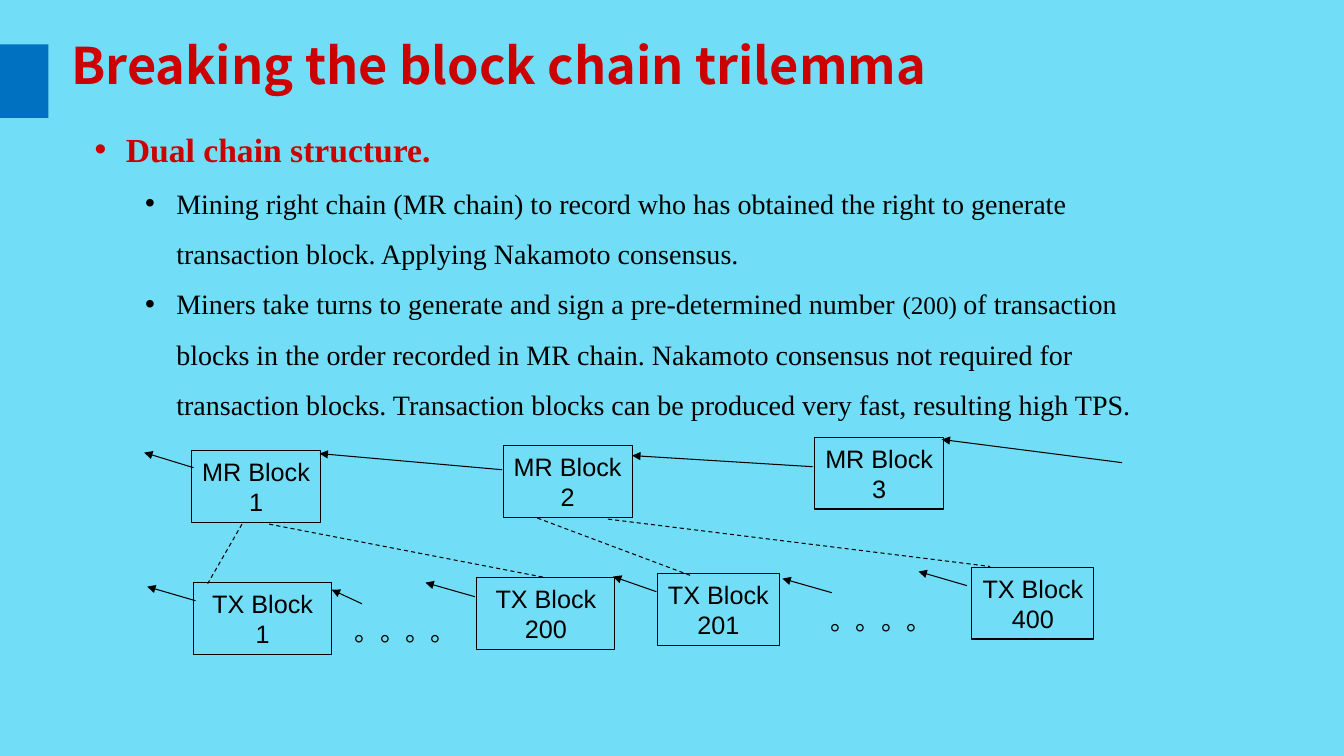
from typing import NamedTuple

from lxml.etree import SubElement as Sub
from pptx import Presentation
from pptx.dml.color import RGBColor
from pptx.enum.dml import MSO_LINE_DASH_STYLE as Dash
from pptx.enum.shapes import MSO_CONNECTOR as Link, MSO_SHAPE as Kind
from pptx.enum.text import MSO_ANCHOR as Anchor, PP_ALIGN as Align
from pptx.oxml.ns import qn
from pptx.util import Inches, Pt

SKY = RGBColor(0x72, 0xDD, 0xF6)
BLUE = RGBColor(0x00, 0x70, 0xC0)
RED = RGBColor(0xCC, 0x00, 0x00)
BLACK = RGBColor(0x00, 0x00, 0x00)
SERIF = "Times New Roman"
SANS = "Arial"


class Block(NamedTuple):
    chain: str
    num: int
    left: float
    top: float
    width: float


class Line(NamedTuple):
    x1: float
    y1: float
    x2: float
    y2: float


class Point(NamedTuple):
    level: int
    runs: list[tuple[str, int]]
    color: RGBColor
    bold: bool


BLOCKS = [
    Block("MR", 1, 1.9, 4.47, 1.28),
    Block("MR", 2, 4.99, 4.42, 1.28),
    Block("MR", 3, 8.08, 4.34, 1.28),
    Block("TX", 1, 1.92, 5.78, 1.37),
    Block("TX", 200, 4.73, 5.73, 1.37),
    Block("TX", 201, 6.52, 5.69, 1.21),
    Block("TX", 400, 9.64, 5.63, 1.21),
]
ARROWS = [
    Line(1.92, 4.64, 1.43, 4.49),
    Line(4.98, 4.66, 3.17, 4.5),
    Line(8.06, 4.63, 6.27, 4.52),
    Line(11.13, 4.59, 9.34, 4.36),
    Line(1.94, 5.96, 1.46, 5.82),
    Line(3.59, 5.99, 3.29, 5.85),
    Line(4.71, 5.92, 4.22, 5.78),
    Line(6.51, 5.87, 6.08, 5.72),
    Line(8.25, 5.88, 7.76, 5.74),
    Line(9.59, 5.81, 9.11, 5.67),
]
DASHES = [
    Line(2.4, 5.2, 2.06, 5.79),
    Line(2.67, 5.2, 5.41, 5.73),
    Line(5.33, 5.14, 6.85, 5.71),
    Line(6.03, 5.15, 9.82, 5.62),
]
DOTS = [(3.42, 6.07), (8.14, 5.96)]
POINTS = [
    Point(0, [("Dual chain structure.", 24)], RED, True),
    Point(1, [("Mining right chain (MR chain) to record who has obtained the right "
               "to generate transaction block. Applying Nakamoto consensus.", 20)],
          BLACK, False),
    Point(1, [("Miners take turns to generate and sign a pre-determined number ", 20),
              ("(200) ", 18),
              ("of transaction blocks in the order recorded in MR chain. Nakamoto "
               "consensus not required for transaction blocks. Transaction blocks "
               "can be produced very fast, resulting high TPS.", 20)],
          BLACK, False),
]


def style(para, face: str, size: int, color: RGBColor, bold: bool = False) -> None:
    font = para.font
    font.name, font.size, font.bold = face, Pt(size), bold
    font.color.rgb = color


def add_box(slide, left: float, top: float, width: float, height: float):
    area = map(Inches, (left, top, width, height))
    frame = slide.shapes.add_textbox(*area).text_frame
    frame.word_wrap = True
    return frame


def add_rect(slide, left: float, top: float, width: float, height: float):
    area = map(Inches, (left, top, width, height))
    rect = slide.shapes.add_shape(Kind.RECTANGLE, *area)
    rect.shadow.inherit = False
    return rect


def add_title(slide) -> None:
    mark = add_rect(slide, 0, 0.44, 0.48, 0.73)
    mark.fill.solid()
    mark.fill.fore_color.rgb = BLUE
    mark.line.fill.background()
    frame = add_box(slide, 0.61, 0.29, 8.85, 0.7)
    frame.vertical_anchor = Anchor.MIDDLE
    para = frame.paragraphs[0]
    para.text = "Breaking the block chain trilemma"
    style(para, "Noto Sans CJK SC", 36, RED, True)


def add_points(slide) -> None:
    frame = add_box(slide, 0.84, 1.03, 10.82, 3.2)
    for i, point in enumerate(POINTS):
        para = frame.add_paragraph() if i else frame.paragraphs[0]
        para.level = point.level
        para.line_spacing = 1.5
        style(para, SERIF, point.runs[0][1], point.color, point.bold)
        for text, size in point.runs:
            run = para.add_run()
            run.text = text
            run.font.size = Pt(size)
        props = para._p.get_or_add_pPr()
        props.set("marL", str(Inches(0.31 + 0.5 * point.level)))
        props.set("indent", str(Inches(-0.31)))
        bullet = props.find(qn("a:defRPr"))
        face = Sub(props, qn("a:buFont"), typeface=SANS)
        char = Sub(props, qn("a:buChar"), char="•")
        bullet.addprevious(face)
        bullet.addprevious(char)


def add_block(slide, block: Block) -> None:
    rect = add_rect(slide, block.left, block.top, block.width, 0.71)
    rect.fill.background()
    rect.line.color.rgb = BLACK
    rect.line.width = Pt(0.75)
    frame = rect.text_frame
    frame.word_wrap = False
    frame.text = f"{block.chain} Block\n{block.num}"
    for para in frame.paragraphs:
        para.alignment = Align.CENTER
        style(para, SANS, 18, BLACK)


def add_line(slide, line: Line, dashed: bool) -> None:
    link = slide.shapes.add_connector(Link.STRAIGHT, *map(Inches, line))
    link.line.color.rgb = BLACK
    link.line.width = Pt(0.75)
    if dashed:
        link.line.dash_style = Dash.DASH
    else:
        Sub(link.line._get_or_add_ln(), qn("a:tailEnd"), type="triangle")
    Sub(link._element.spPr, qn("a:effectLst"))


def add_dots(slide, left: float, top: float) -> None:
    frame = add_box(slide, left, top, 1.2, 0.4)
    frame.word_wrap = False
    para = frame.paragraphs[0]
    para.text = "。。。。"
    para.alignment = Align.CENTER
    style(para, SANS, 18, BLACK)


def main() -> None:
    deck = Presentation()
    deck.slide_width, deck.slide_height = Inches(13.33), Inches(7.5)
    slide = deck.slides.add_slide(deck.slide_layouts[6])
    back = slide.background.fill
    back.solid()
    back.fore_color.rgb = SKY
    add_title(slide)
    add_points(slide)
    for block in BLOCKS:
        add_block(slide, block)
    for line in ARROWS:
        add_line(slide, line, False)
    for line in DASHES:
        add_line(slide, line, True)
    for left, top in DOTS:
        add_dots(slide, left, top)
    deck.save("out.pptx")


if __name__ == "__main__":
    main()
